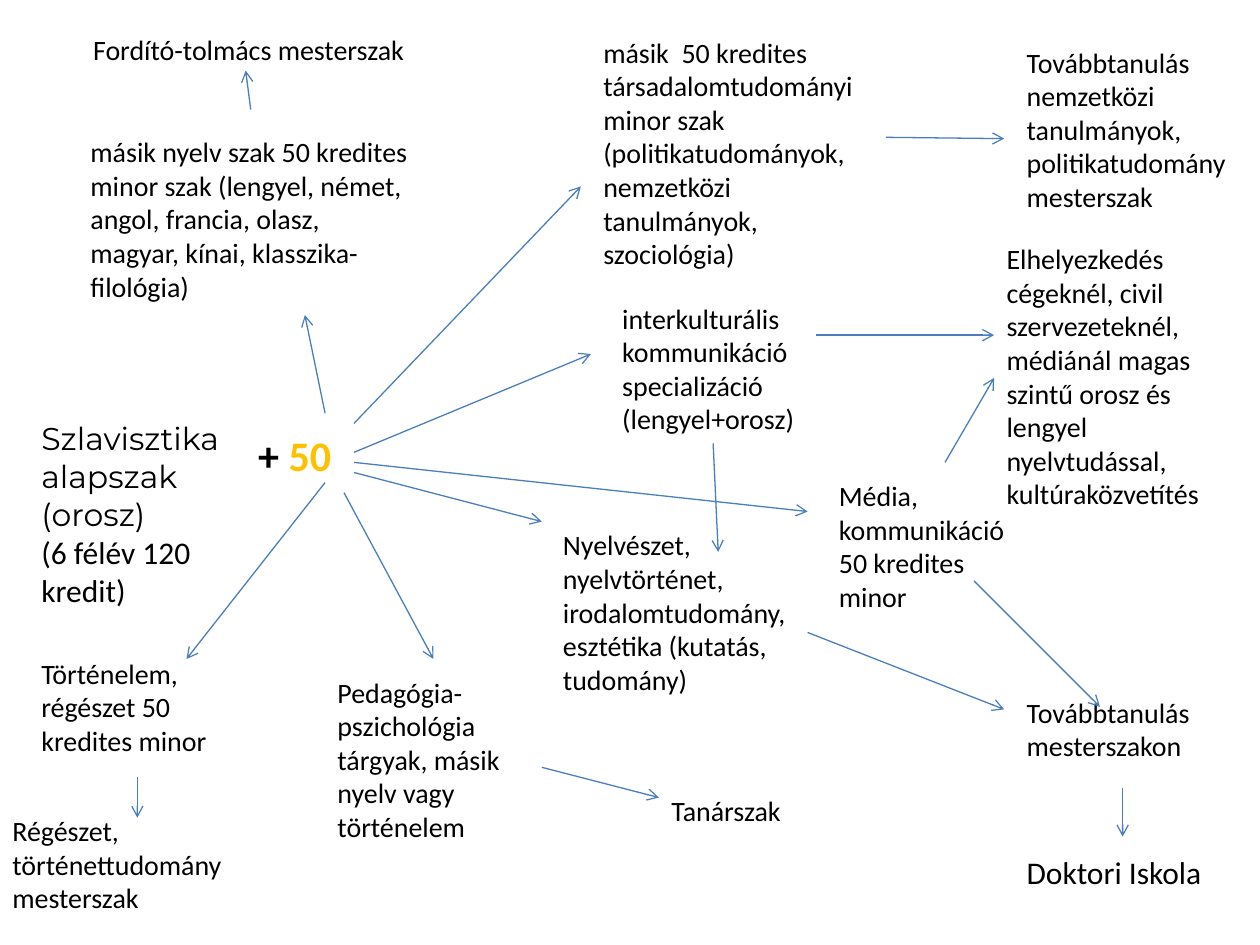
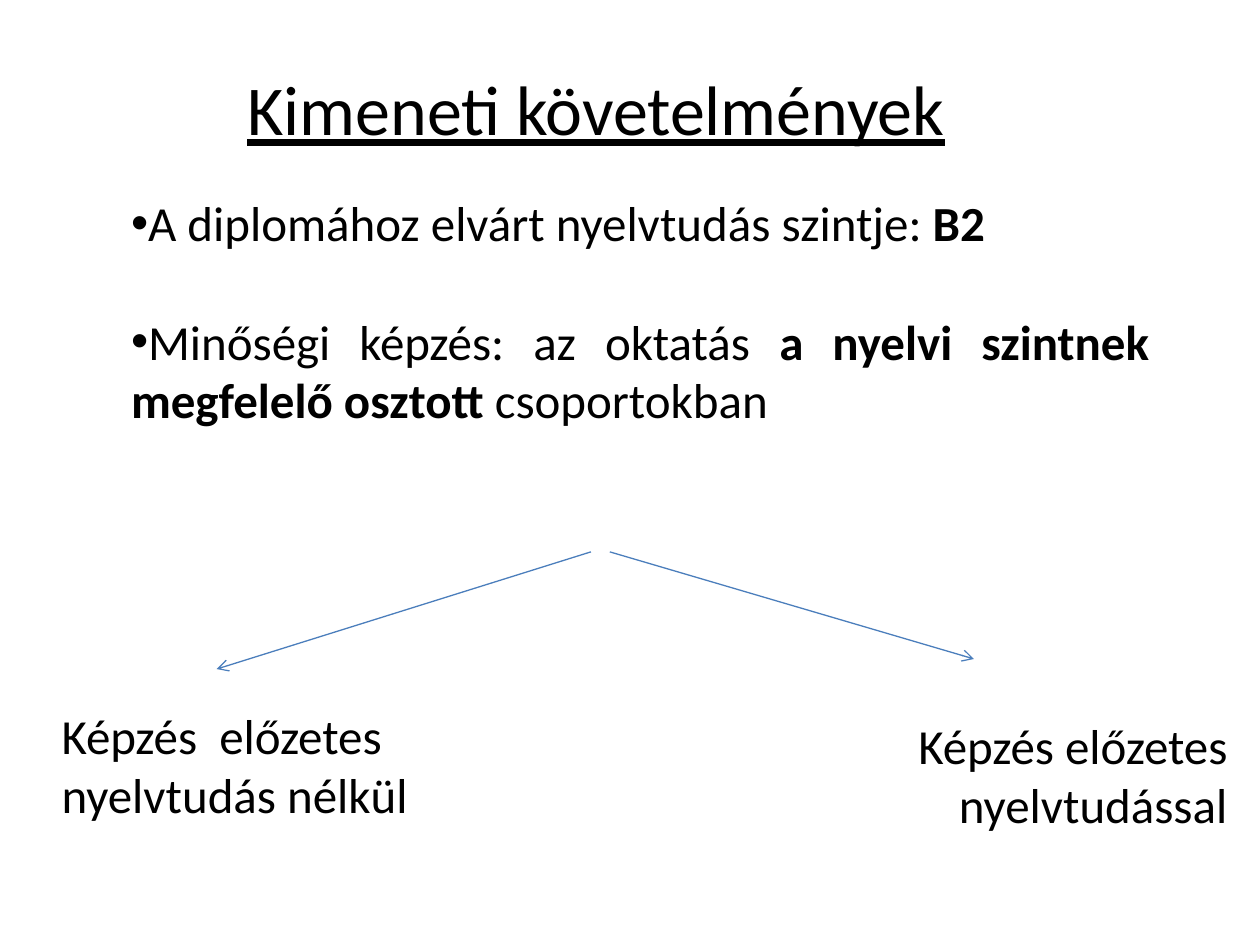
from pptx import Presentation
from pptx.dml.color import RGBColor
from pptx.enum.shapes import MSO_CONNECTOR as CONN
from pptx.enum.text import MSO_ANCHOR as ANCHOR, MSO_AUTO_SIZE as FIT, PP_ALIGN as AL
from pptx.oxml.ns import qn
from pptx.util import Inches, Pt
from lxml.etree import SubElement

BLACK = RGBColor(0x00, 0x00, 0x00)
BLUE = RGBColor(0x4B, 0x7E, 0xBC)
GOLD = RGBColor(0xFF, 0xC0, 0x00)
BOTTOM, LEFT = 2, 1


class Deck:
    """Holds the shared style and the current slide."""
    font = "Calibri"

    def __init__(self):
        self.prs = Presentation()
        self.prs.slide_width, self.prs.slide_height = Inches(10), Inches(7.5)

    def new_slide(self, layout):
        self.s = self.prs.slides.add_slide(self.prs.slide_layouts[layout])

    def style(self, p, size, align=AL.LEFT, font=None):
        p.alignment = align
        p.font.size, p.font.name = Pt(size), font or self.font
        p.font.color.rgb = BLACK

    def place(self, sp, box):
        sp.left, sp.top, sp.width, sp.height = (Inches(v) for v in box)
        tf = sp.text_frame
        tf.word_wrap, tf.auto_size = True, FIT.NONE
        tf.vertical_anchor = ANCHOR.TOP
        return tf

    def text(self, box, text, size=16, align=AL.LEFT, font=None):
        sp = self.s.shapes.add_textbox(*(Inches(v) for v in box))
        p = self.place(sp, box).paragraphs[0]
        p.text = text
        self.style(p, size, align, font)
        return sp

    def title(self, box, text, size=40):
        p = self.place(self.s.shapes.title, box).paragraphs[0]
        p.text = text
        self.style(p, size, AL.CENTER)
        p.font.underline = True

    def bullets(self, box, items, size=28, gap=34):
        """Each item is (alignment, [(text, bold), ...])."""
        tf = self.place(self.s.placeholders[1], box)
        for i, (align, runs) in enumerate(items):
            p = tf.add_paragraph() if i else tf.paragraphs[0]
            self.style(p, size, align)
            p.space_before = Pt(gap if i else 0)
            pPr = p._p.get_or_add_pPr()
            pPr.set("marL", "0")
            pPr.set("indent", "0")
            for text, bold in runs:
                r = p.add_run()
                r.text, r.font.bold = text, bold

    def arrow(self, x1, y1, x2, y2):
        c = self.s.shapes.add_connector(CONN.STRAIGHT, *(Inches(v) for v in (x1, y1, x2, y2)))
        c.line.color.rgb, c.line.width = BLUE, Pt(0.75)
        SubElement(c.line._get_or_add_ln(), qn("a:tailEnd"), type="arrow")
        SubElement(c._element.spPr, qn("a:effectLst"))
        return c


def study_paths(d):
    d.new_slide(6)

    # Starting point: the degree and its free credits
    sp = d.text((0.23, 3.28, 1.88, 1.62), "Szlavisztika alapszak (orosz)", 18, font="Montserrat")
    p = sp.text_frame.add_paragraph()
    p.text = "(6 félév 120 kredit)"
    d.style(p, 18)
    p = d.text((1.95, 3.36, 0.78, 0.5), "+", 24).text_frame.paragraphs[0]
    p.font.bold = True
    r = p.add_run()
    r.text, r.font.color.rgb = " 50", GOLD

    # Choices and where they lead
    for box, text in [
        ((0.64, 0.21, 2.81, 0.67), "Fordító-tolmács mesterszak"),
        ((0.62, 1.02, 2.73, 1.72), "másik nyelv szak 50 kredites minor szak (lengyel, német, "
                                   "angol, francia, olasz, magyar, kínai, klasszika-filológia)"),
        ((4.69, 0.23, 2.27, 2.29), "másik  50 kredites társadalomtudományi  minor szak "
                                   "(politikatudományok, nemzetközi tanulmányok, szociológia)"),
        ((8.05, 0.31, 1.8, 1.45), "Továbbtanulás nemzetközi tanulmányok, politikatudomány mesterszak"),
        ((4.37, 4.14, 2.03, 1.75), "Nyelvészet, nyelvtörténet, irodalomtudomány, esztétika "
                                   "(kutatás, tudomány)"),
        ((6.56, 3.75, 1.56, 1.18), "Média, kommunikáció 50 kredites minor"),
        ((8.05, 5.47, 1.8, 0.64), "Továbbtanulás mesterszakon"),
        ((2.58, 5.31, 1.72, 1.45), "Pedagógia-pszichológia tárgyak, másik nyelv vagy történelem"),
        ((5.23, 6.25, 1.48, 0.37), "Tanárszak"),
        ((0.23, 5.16, 1.72, 1.21), "Történelem, régészet 50 kredites minor"),
        ((0, 6.41, 2.58, 0.91), "Régészet, történettudomány mesterszak"),
    ]:
        d.text(box, text)
    d.text((8.05, 6.72, 1.64, 0.71), "Doktori Iskola", 18)
    intercultural = d.text((4.84, 2.34, 1.64, 1.18),
                           "interkulturális kommunikáció specializáció (lengyel+orosz)")
    jobs = d.text((7.89, 1.87, 1.88, 2.26),
                  "Elhelyezkedés cégeknél, civil szervezeteknél, médiánál magas szintű "
                  "orosz és lengyel nyelvtudással, kultúraközvetítés")

    # Arrows from the free credits to the choices
    for ends in [(2.58, 3.28, 2.42, 2.5), (2.81, 3.36, 4.61, 1.48), (2.81, 3.59, 4.69, 2.81),
                 (2.81, 3.67, 6.41, 4.06), (2.81, 3.75, 4.3, 4.14), (2.73, 3.91, 3.44, 5.23),
                 (2.58, 3.83, 1.48, 5.23)]:
        d.arrow(*ends)

    # Arrows from the choices onwards
    for ends in [(1.99, 0.87, 1.95, 0.56), (7.03, 1.09, 7.97, 1.1), (6.48, 2.66, 7.89, 2.66),
                 (6.41, 5.02, 7.97, 5.63), (7.73, 4.61, 8.73, 5.61), (8.91, 6.25, 8.91, 6.64),
                 (4.3, 6.09, 5.23, 6.33), (1.09, 6.17, 1.09, 6.49)]:
        d.arrow(*ends)
    d.arrow(5.66, 3.52, 5.7, 4.38).begin_connect(intercultural, BOTTOM)
    d.arrow(7.5, 3.67, 7.89, 3).end_connect(jobs, LEFT)


def requirements(d):
    d.new_slide(1)
    d.title((1.41, 0.47, 6.64, 0.77), "Kimeneti követelmények")
    d.bullets((0.94, 1.48, 8.28, 2.39), [
        (AL.LEFT, [("A diplomához elvárt nyelvtudás szintje: ", False), ("B2", True)]),
        (AL.JUSTIFY, [("Minőségi képzés: az oktatás ", False),
                      ("a nyelvi szintnek megfelelő osztott", True), (" csoportokban", False)]),
    ])

    # Two kinds of group
    d.arrow(4.69, 4.38, 1.72, 5.31)
    d.arrow(4.84, 4.38, 7.73, 5.23)
    d.text((0.39, 5.55, 3.83, 1.35), "Képzés  előzetes  nyelvtudás nélkül", 28)
    d.text((5.23, 5.63, 4.61, 1.35), "Képzés előzetes nyelvtudással", 28, AL.RIGHT)


def main():
    d = Deck()
    study_paths(d)
    requirements(d)
    d.prs.save("out.pptx")


if __name__ == "__main__":
    main()
